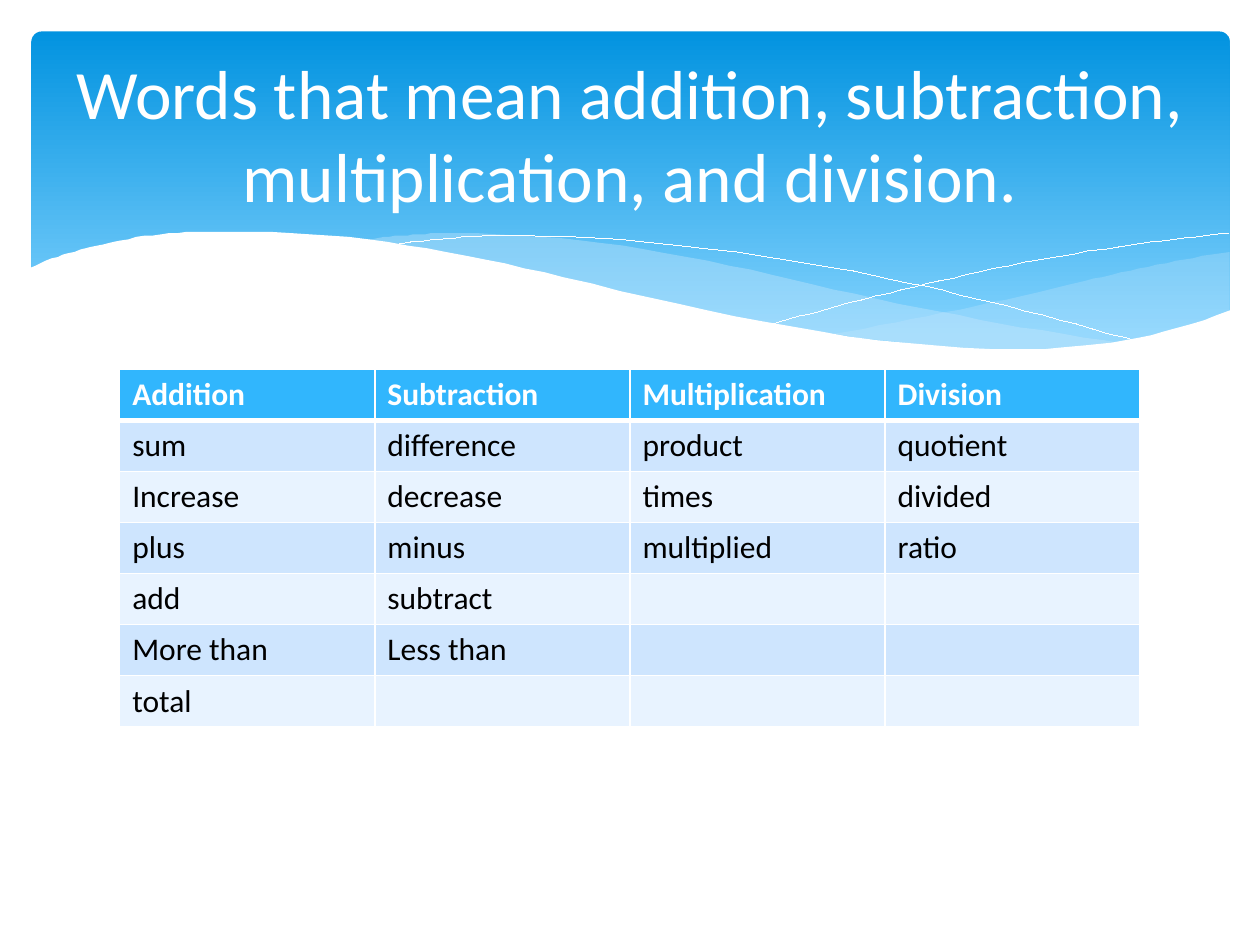
from itertools import pairwise

from lxml import etree
from pptx import Presentation
from pptx import util as u
from pptx.dml.color import RGBColor
from pptx.enum import shapes, text
from pptx.oxml.ns import qn

PX = 9144
STEPS = 16
C = {"white": "FFFFFF", "black": "000000", "top": "0293E0", "bottom": "83D3FE",
     "wave": "C6E7FC", "header": "31B6FD", "band": "CEE5FE", "pale": "E8F3FF"}


def write(tf, words, size=18, color="black", bold=False, align=text.PP_ALIGN.LEFT):
    p = tf.paragraphs[0]
    p.alignment = align
    r = p.add_run()
    r.text = words
    r.font.name = "Calibri"
    r.font.size = u.Pt(size)
    r.font.bold = bold
    r.font.color.rgb = RGBColor.from_string(C[color])


def curve(*knots):
    points = [knots[0][:2]]
    for (x0, y0, slope0), (x1, y1, slope1) in pairwise(knots):
        dx, dy = x1 - x0, y1 - y0
        for step in range(1, STEPS + 1):
            t = step / STEPS
            ease = t * t * (3 - 2 * t)
            bend = t * (1 - t) * ((1 - t) * slope0 - t * slope1)
            points.append((x0 + dx * t, y0 + dy * ease + dx * bend))
    return points


prs = Presentation()
prs.slide_width, prs.slide_height = 1000 * PX, 750 * PX
s = prs.slides.add_slide(prs.slide_layouts[5])

sp = s.shapes.add_shape(shapes.MSO_SHAPE.ROUNDED_RECTANGLE, 25 * PX, 25 * PX, 951 * PX, 270 * PX)
sp.adjustments[0] = 0.03
sp.shadow.inherit = False
sp.line.fill.background()
sp.fill.gradient()
sp.fill.gradient_angle = 270
for stop, color, pos in zip(sp.fill.gradient_stops, ("top", "bottom"), (0, 0.9)):
    stop.color.rgb = RGBColor.from_string(C[color])
    stop.position = pos

# Each knot is (x, y, slope).
right_crest = curve((661, 265, -0.17), (861, 223, -0.24), (976, 200, -0.14))
right_trough = curve((661, 265, 0.15), (817, 278, 0), (976, 247, -0.38))
middle_crest = curve((286, 191, -0.15), (361, 185, 0), (629, 222, 0.24), (893, 273, 0.15))
middle_trough = curve((286, 191, 0.13), (449, 222, 0.25), (828, 278, 0), (893, 273, -0.14))
falling_line = curve((309, 195, -0.17), (401, 187, 0), (695, 219, 0.2), (907, 272, 0.28))
rising_line = curve((613, 257, -0.28), (776, 216, -0.22), (975, 185, -0.1))
hill_crest = curve((23, 213, -0.5), (95, 191, -0.23), (200, 184, 0),
                   (447, 220, 0.24), (809, 277, 0), (977, 246, -0.4))
hill_base = [(23, 329), (977, 329)]

bands = [(right_crest, right_trough, "wave", 29),
         (middle_crest, middle_trough, "wave", 40),
         (falling_line, [], None, 100),
         (rising_line, [], None, 100),
         (hill_crest, hill_base, "white", 100)]
for upper, lower, color, opacity in bands:
    points = upper + lower[::-1]
    fb = s.shapes.build_freeform(*points[0], scale=PX)
    fb.add_line_segments(points[1:], close=bool(lower))
    sp = fb.convert_to_shape()
    sp.shadow.inherit = False
    if color is None:
        sp.fill.background()
        sp.line.color.rgb = RGBColor.from_string(C["white"])
        sp.element.find(".//" + qn("a:ln")).set("w", "0")
        continue
    sp.line.fill.background()
    sp.fill.solid()
    sp.fill.fore_color.rgb = RGBColor.from_string(C[color])
    if opacity < 100:
        tint = sp.element.find(".//" + qn("a:srgbClr"))
        etree.SubElement(tint, qn("a:alpha"), val=str(opacity * 1000))

rows = [
    ("Addition", "Subtraction", "Multiplication", "Division"),
    ("sum", "difference", "product", "quotient"),
    ("Increase", "decrease", "times", "divided"),
    ("plus", "minus", "multiplied", "ratio"),
    ("add", "subtract", "", ""),
    ("More than", "Less than", "", ""),
    ("total", "", "", "")]
thick_edges = {(0, "lnB"), (1, "lnT")}
table = s.shapes.add_table(len(rows), len(rows[0]), 95 * PX, 293 * PX, 810 * PX, 284 * PX).table
for i, row in enumerate(rows):
    head = i == 0
    fill = "header" if head else "band" if i % 2 else "pale"
    for j, words in enumerate(row):
        cell = table.cell(i, j)
        for side in ("lnL", "lnR", "lnT", "lnB"):
            width = u.Pt(3 if (i, side) in thick_edges else 1)
            ln = etree.SubElement(cell._tc.get_or_add_tcPr(), qn("a:" + side), w=str(width))
            etree.SubElement(etree.SubElement(ln, qn("a:solidFill")), qn("a:srgbClr"), val=C["white"])
        cell.fill.solid()
        cell.fill.fore_color.rgb = RGBColor.from_string(C[fill])
        if words:
            write(cell.text_frame, words, color="white" if head else "black", bold=head)

title = s.shapes.title
title.left, title.top, title.width, title.height = 50 * PX, 37 * PX, 900 * PX, 137 * PX
tf = title.text_frame
tf.word_wrap = True
tf.auto_size = text.MSO_AUTO_SIZE.NONE
tf.vertical_anchor = text.MSO_ANCHOR.MIDDLE
write(tf, "Words that mean addition, subtraction, multiplication, and division.",
      size=39.6, color="white", align=text.PP_ALIGN.CENTER)
title.element.getparent().append(title.element)

prs.save("out.pptx")
